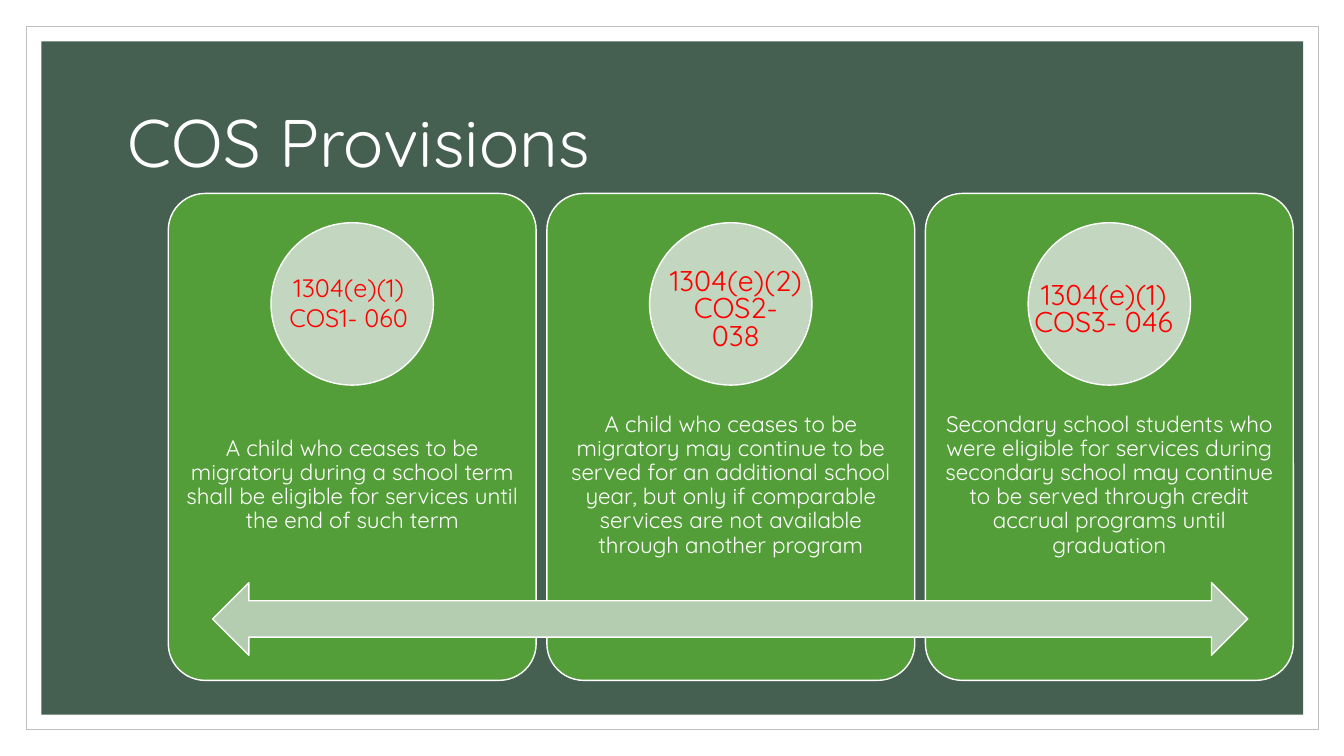
from lxml import etree
from pptx import Presentation
from pptx.dml.color import RGBColor
from pptx.enum.shapes import MSO_SHAPE
from pptx.enum.text import MSO_ANCHOR, MSO_AUTO_SIZE, PP_ALIGN
from pptx.oxml.ns import qn
from pptx.util import Pt

RECTANGLE = MSO_SHAPE.RECTANGLE
ROUNDED = MSO_SHAPE.ROUNDED_RECTANGLE
CIRCLE = MSO_SHAPE.OVAL
DOUBLE_ARROW = MSO_SHAPE.LEFT_RIGHT_ARROW
MIDDLE = MSO_ANCHOR.MIDDLE
NO_AUTOFIT = MSO_AUTO_SIZE.NONE
LEFT, CENTER = PP_ALIGN.LEFT, PP_ALIGN.CENTER

FONT = "Quicksand"
COLORS = {
    "white": "FFFFFF",
    "frame": "BFBFBF",
    "backdrop": "455F51",
    "card": "549E39",
    "circle": "C3D6BF",
    "arrow": "B4CCAF",
    "code": "FF0000",
}

CARD_LEFT, CARD_TOP, CARD_WIDTH, CARD_HEIGHT = 120.2, 138.2, 262.8, 347.8
CARD_STEP = 270.4
CIRCLE_TOP, CIRCLE_SIZE = 159.1, 116
PROVISION_TOP, PROVISION_HEIGHT = 277.2, 139
CODE_SIZE = (113.8, 72)

PROVISIONS = [
    "A child who ceases to be migratory during a school term shall be "
    "eligible for services until the end of such term",
    "A child who ceases to be migratory may continue to be served for an "
    "additional school year, but only if comparable services are not "
    "available through another program",
    "Secondary school students who were eligible for services during "
    "secondary school may continue to be served through credit accrual "
    "programs until graduation",
]
FIRST_CODE = ["1304(e)(1)", "COS1- 060"]
OTHER_CODES = [
    (468.7, ["1304(e)(2)", "COS2- 038"]),
    (731.5, ["1304(e)(1)", "COS3- 046"]),
]

TITLE_STYLE = {"size": 48, "color": "white", "align": LEFT, "spacing": 0.9}
PROVISION_STYLE = {"size": 16, "color": "white", "align": CENTER, "spacing": 0.9}
FIRST_CODE_STYLE = {"size": 18, "color": "code", "align": CENTER, "spacing": 1.0}
CODE_STYLE = {"size": 20.4, "color": "code", "align": CENTER, "spacing": 0.8}


def color(name):
    return RGBColor.from_string(COLORS[name])


def add_panel(slide, kind, box, fill, line=None, line_width=1):
    panel = slide.shapes.add_shape(kind, *map(Pt, box))
    panel.shadow.inherit = False
    panel.fill.solid()
    panel.fill.fore_color.rgb = color(fill)
    if line:
        panel.line.color.rgb = color(line)
        panel.line.width = Pt(line_width)
    else:
        panel.line.fill.background()
    return panel


def write(shape, lines, style, inset=(7.2, 3.6)):
    """Fill a text shape with one paragraph for each line."""
    across, down = map(Pt, inset)
    frame = shape.text_frame
    frame_format = {
        "word_wrap": True,
        "auto_size": NO_AUTOFIT,
        "vertical_anchor": MIDDLE,
        "margin_left": across,
        "margin_right": across,
        "margin_top": down,
        "margin_bottom": down,
    }
    for attribute, value in frame_format.items():
        setattr(frame, attribute, value)
    frame.text = "\n".join(lines)
    for paragraph in frame.paragraphs:
        paragraph.alignment = style["align"]
        paragraph.line_spacing = style["spacing"]
        paragraph.space_before = paragraph.space_after = Pt(0)
        font = paragraph.runs[0].font
        font.name = FONT
        font.size = Pt(style["size"])
        font.color.rgb = color(style["color"])


def add_text(slide, box, lines, style, **options):
    write(slide.shapes.add_textbox(*map(Pt, box)), lines, style, **options)


def place(placeholder, box):
    """Position a placeholder and bring it in front of what is drawn so far."""
    for side, length in zip(("left", "top", "width", "height"), box):
        setattr(placeholder, side, Pt(length))
    element = placeholder.element
    element.getparent().append(element)


def remove_bullets(placeholder):
    for paragraph in placeholder.text_frame.paragraphs:
        properties = paragraph._p.get_or_add_pPr()
        properties.set("marL", "0")
        properties.set("indent", "0")
        etree.SubElement(properties, qn("a:buNone"))


def add_card(slide, left, provision):
    card = add_panel(slide, ROUNDED, (left, CARD_TOP, CARD_WIDTH, CARD_HEIGHT),
                     "card", "white")
    card.adjustments[0] = 0.1
    add_text(slide, (left, PROVISION_TOP, CARD_WIDTH, PROVISION_HEIGHT),
             [provision], PROVISION_STYLE, inset=(8.6, 8.6))
    circle_left = left + (CARD_WIDTH - CIRCLE_SIZE) / 2
    add_panel(slide, CIRCLE, (circle_left, CIRCLE_TOP, CIRCLE_SIZE, CIRCLE_SIZE),
              "circle", "white")


def main():
    deck = Presentation()
    deck.slide_width, deck.slide_height = Pt(960), Pt(540)
    slide = deck.slides.add_slide(deck.slide_layouts[1])
    title, first_code = slide.placeholders

    add_panel(slide, RECTANGLE, (18.7, 18.7, 923, 502.6), "white", "frame", 0.5)
    add_panel(slide, RECTANGLE, (29.5, 29.5, 901.4, 481), "backdrop")

    place(title, (84.2, 50.4, 792, 108))
    write(title, ["COS Provisions"], TITLE_STYLE)

    for index, provision in enumerate(PROVISIONS):
        add_card(slide, CARD_LEFT + index * CARD_STEP, provision)
    add_panel(slide, DOUBLE_ARROW, (151.9, 416.2, 739.4, 51.8), "arrow", "white")

    place(first_code, (192.2, 180, *CODE_SIZE))
    write(first_code, FIRST_CODE, FIRST_CODE_STYLE)
    remove_bullets(first_code)
    for left, code in OTHER_CODES:
        add_text(slide, (left, 185.8, *CODE_SIZE), code, CODE_STYLE)

    deck.save("out.pptx")


if __name__ == "__main__":
    main()
